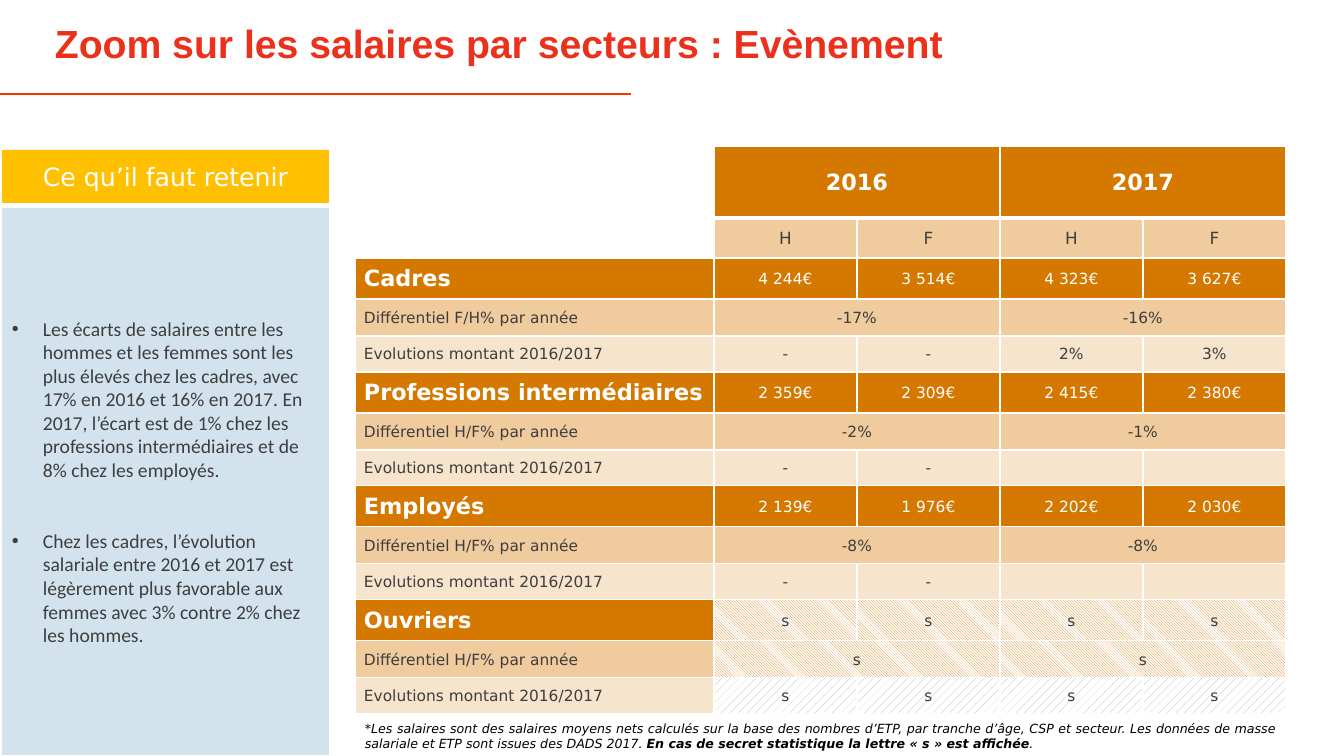
"""Build the slide on salaries by sector."""
from dataclasses import dataclass

from lxml.etree import SubElement
from pptx import Presentation
from pptx.dml.color import RGBColor as RGB
from pptx.enum.dml import MSO_PATTERN as PATTERN
from pptx.enum.shapes import MSO_CONNECTOR as CONNECTOR, MSO_SHAPE as SHAPE
from pptx.enum.text import MSO_ANCHOR as ANCHOR, PP_ALIGN as ALIGN
from pptx.oxml.ns import qn
from pptx.util import Emu, Pt

EMU_PER_PX = 12192000 / 1344


@dataclass(frozen=True)
class Theme:
    """Colours, fonts and type sizes."""
    red: str = "EB311B"
    rule: str = "FF3300"
    yellow: str = "FFC000"
    blue: str = "2373A5"
    orange: str = "D57800"
    grey: str = "B2B2B2"
    ink: str = "3E3E3E"
    black: str = "000000"
    white: str = "FFFFFF"
    title_font: str = "Arial"
    body_font: str = "Calibri"
    table_font: str = "DejaVu Sans"
    title: int = 28
    banner: int = 18
    heading: int = 16
    body: int = 14
    gender: int = 12
    value: int = 11
    note: int = 9


T = Theme()
STRONG, MEDIUM, LIGHT = 100, 38, 20
HATCHES = (
    (PATTERN.DARK_DOWNWARD_DIAGONAL, T.orange),
    (PATTERN.LIGHT_DOWNWARD_DIAGONAL, T.orange),
    (PATTERN.PERCENT_20, T.grey),
)
EVOLUTION = "Evolutions montant 2016/2017"
GROUPS = (
    ("Cadres", ("4 244€", "3 514€", "4 323€", "3 627€"),
     "Différentiel F/H% par année", ("-17%", "-16%"), ("-", "-", "2%", "3%")),
    ("Professions intermédiaires", ("2 359€", "2 309€", "2 415€", "2 380€"),
     "Différentiel H/F% par année", ("-2%", "-1%"), ("-", "-", "", "")),
    ("Employés", ("2 139€", "1 976€", "2 202€", "2 030€"),
     "Différentiel H/F% par année", ("-8%", "-8%"), ("-", "-", "", "")),
    ("Ouvriers", "ssss", "Différentiel H/F% par année", "ss", "ssss"),
)
FINDINGS = (
    "Les écarts de salaires entre les hommes et les femmes sont les plus élevés "
    "chez les cadres, avec 17% en 2016 et 16% en 2017. En 2017, l’écart est de 1% "
    "chez les professions intermédiaires et de 8% chez les employés.",
    "Chez les cadres, l’évolution salariale entre 2016 et 2017 est légèrement plus "
    "favorable aux femmes avec 3% contre 2% chez les hommes.",
)
NOTE = (
    "*Les salaires sont des salaires moyens nets calculés sur la base des nombres "
    "d’ETP, par tranche d’âge, CSP et secteur. Les données de masse salariale et ETP "
    "sont issues des DADS 2017. ",
    "En cas de secret statistique la lettre « s » est affichée",
    ".",
)


def px(n):
    """Turn pixels into EMU."""
    return Emu(round(n * EMU_PER_PX))


def style(r, font, size, color, bold=False, italic=False):
    """Format one run."""
    r.font.name, r.font.size = font, Pt(size)
    r.font.bold, r.font.italic = bold, italic
    r.font.color.rgb = RGB.from_string(color)


def paint(fill, color, opacity=STRONG):
    """Apply a solid fill with an opacity in percent."""
    fill.solid()
    fill.fore_color.rgb = RGB.from_string(color)
    if opacity < STRONG:
        for clr in fill._xPr.iter(qn("a:srgbClr")):
            if clr.getparent().getparent() is fill._xPr:
                SubElement(clr, qn("a:alpha"), val=str(opacity * 1000))


def hatch(fill, pattern, color):
    """Apply a pattern on white."""
    fill.patterned()
    fill.pattern = pattern
    fill.fore_color.rgb = RGB.from_string(color)
    fill.back_color.rgb = RGB.from_string(T.white)


def add_text(slide, *box):
    """Add a wrapping text box and return its frame."""
    tf = slide.shapes.add_textbox(*map(px, box)).text_frame
    tf.word_wrap = True
    return tf


def add_panel(slide, box, color, opacity=STRONG):
    """Add a borderless rectangle and return its frame."""
    sp = slide.shapes.add_shape(SHAPE.RECTANGLE, *map(px, box))
    sp.shadow.inherit = False
    sp.line.fill.background()
    paint(sp.fill, color, opacity)
    tf = sp.text_frame
    tf.word_wrap, tf.vertical_anchor = True, ANCHOR.MIDDLE
    return tf


def add_title(slide):
    """Add the title and the rule under it."""
    line = slide.shapes.add_connector(CONNECTOR.STRAIGHT, 0, px(94), px(631), px(94))
    line.line.width = Pt(1.5)
    line.line.color.rgb = RGB.from_string(T.rule)
    SubElement(line._element.spPr, qn("a:effectLst"))
    tf = add_text(slide, 45, 9, 1210, 74)
    tf.vertical_anchor = ANCHOR.MIDDLE
    p = tf.paragraphs[0]
    p.text, p.line_spacing = "Zoom sur les salaires par secteurs : Evènement", 0.9
    style(p.runs[0], T.title_font, T.title, T.red, bold=True)


def add_findings(slide):
    """Add the banner and the bulleted panel."""
    p = add_panel(slide, (2, 150, 327, 53), T.yellow).paragraphs[0]
    p.text, p.alignment = "Ce qu’il faut retenir", ALIGN.CENTER
    style(p.runs[0], T.table_font, T.banner, T.white)

    tf = add_panel(slide, (2, 208, 327, 547), T.blue, LIGHT)
    tf.text = "\n".join(FINDINGS)
    for i, p in enumerate(tf.paragraphs):
        p.alignment, p.space_before = ALIGN.LEFT, Pt(34 * i)
        pPr = p._p.get_or_add_pPr()
        pPr.set("marL", str(px(31)))
        pPr.set("indent", str(-px(31)))
        SubElement(pPr, qn("a:buFont"), typeface="Arial")
        SubElement(pPr, qn("a:buChar"), char="•")
        style(p.runs[0], T.body_font, T.body, T.ink)


def add_note(slide):
    """Add the footnote."""
    p = add_text(slide, 355, 716, 930, 40).paragraphs[0]
    p.alignment = ALIGN.JUSTIFY
    for i, text in enumerate(NOTE):
        r = p.add_run()
        r.text = text
        style(r, T.table_font, T.note, T.black, bold=i == 1, italic=True)


def prepare(cell, header):
    """Give a cell white borders, tight margins and no fill."""
    tcPr = cell._tc.get_or_add_tcPr()
    for side in "LRTB":
        width = Pt(3 if header and side == "B" else 1)
        ln = SubElement(tcPr, qn(f"a:ln{side}"), w=str(width))
        SubElement(SubElement(ln, qn("a:solidFill")), qn("a:srgbClr"), val=T.white)
    cell.margin_left = cell.margin_right = cell.margin_top = px(1)
    cell.margin_bottom = 0
    cell.vertical_anchor = ANCHOR.MIDDLE
    cell.fill.background()


def write(cell, text, size, color, bold=False, align=ALIGN.CENTER):
    """Write one formatted line in a cell."""
    cell.text = text
    p = cell.text_frame.paragraphs[0]
    p.alignment = align
    for r in p.runs:
        style(r, T.table_font, size, color, bold)


def fill_row(table, row, values, size, color, opacity, bold=False, pattern=None):
    """Fill the value columns, merging them evenly when there are fewer values."""
    span = 4 // len(values)
    for i, text in enumerate(values):
        first = 1 + i * span
        cell = table.cell(row, first)
        if span > 1:
            cell.merge(table.cell(row, first + span - 1))
        write(cell, text, size, color, bold)
        if pattern:
            hatch(cell.fill, *pattern)
        else:
            paint(cell.fill, T.orange, opacity)


def add_salaries(slide):
    """Add the salary table."""
    heights = [72, 40] + [41, 37, 36] * len(GROUPS)
    widths = [359] + [143] * 4
    box = (355, 146, sum(widths), sum(heights))
    table = slide.shapes.add_table(len(heights), len(widths), *map(px, box)).table
    table.first_row = table.horz_banding = False
    for col, width in zip(table.columns, widths):
        col.width = px(width)
    for i, (row, height) in enumerate(zip(table.rows, heights)):
        row.height = px(height)
        for cell in row.cells:
            prepare(cell, i == 0)

    fill_row(table, 0, ("2016", "2017"), T.heading, T.white, STRONG, bold=True)
    fill_row(table, 1, "HFHF", T.gender, T.ink, MEDIUM)
    for g, (name, pay, gap_label, gaps, changes) in enumerate(GROUPS):
        hidden = pay == "ssss"
        lines = (
            (name, pay, STRONG, T.heading, T.white),
            (gap_label, gaps, MEDIUM, T.value, T.ink),
            (EVOLUTION, changes, LIGHT, T.value, T.ink),
        )
        for k, (label, values, opacity, size, color) in enumerate(lines):
            row = 2 + 3 * g + k
            cell = table.cell(row, 0)
            cell.margin_left = px(9)
            write(cell, label, size, color, k == 0, ALIGN.LEFT)
            paint(cell.fill, T.orange, opacity)
            fill_row(table, row, values, T.value, T.ink if hidden else color, opacity,
                     pattern=HATCHES[k] if hidden else None)


def main():
    """Build and save the slide."""
    prs = Presentation()
    prs.slide_width, prs.slide_height = px(1344), px(756)
    slide = prs.slides.add_slide(prs.slide_layouts[6])
    add_title(slide)
    add_findings(slide)
    add_note(slide)
    add_salaries(slide)
    prs.save("out.pptx")


if __name__ == "__main__":
    main()
